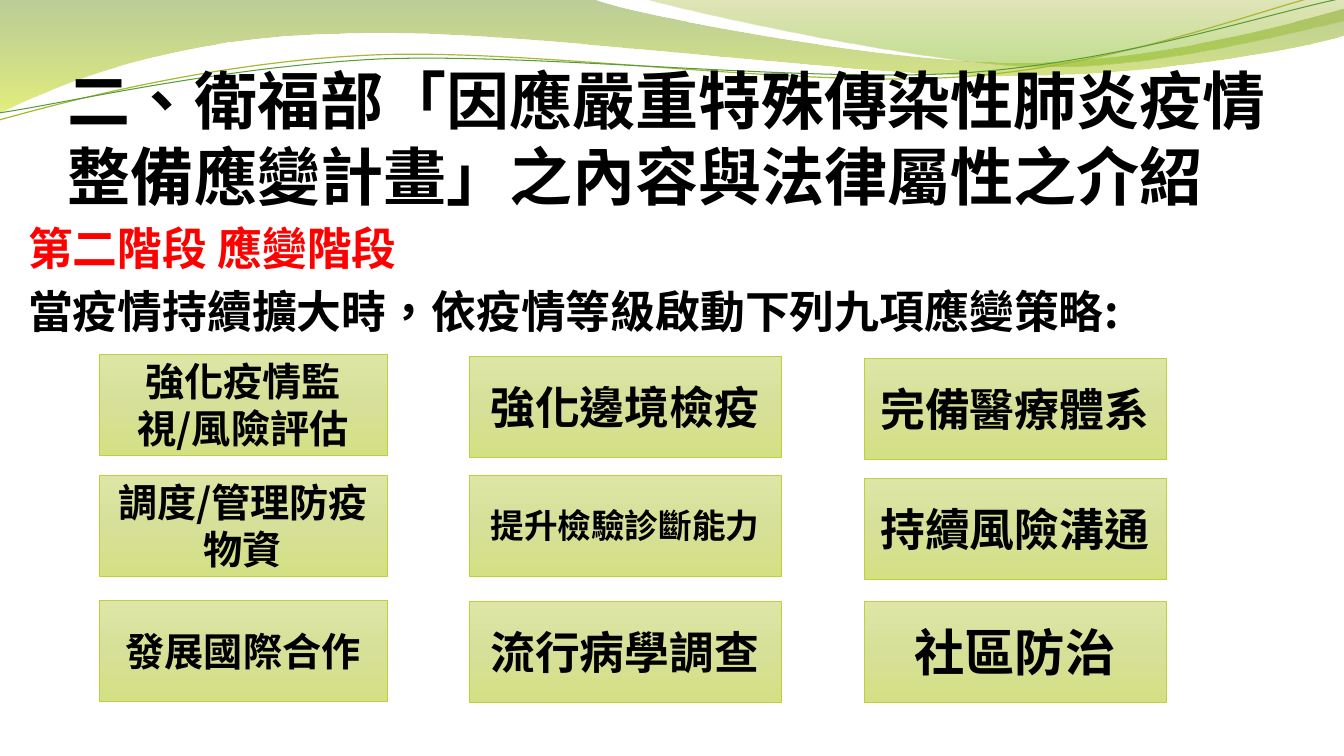
from math import cos, radians, sin

from lxml import etree
from pptx import Presentation
from pptx.dml.color import RGBColor
from pptx.enum.shapes import MSO_SHAPE
from pptx.enum.text import MSO_ANCHOR, MSO_AUTO_SIZE, PP_ALIGN
from pptx.oxml.ns import qn
from pptx.util import Pt

LEFT, CENTER = PP_ALIGN.LEFT, PP_ALIGN.CENTER
BOTTOM, MIDDLE = MSO_ANCHOR.BOTTOM, MSO_ANCHOR.MIDDLE
RECTANGLE = MSO_SHAPE.RECTANGLE
NO_AUTOFIT = MSO_AUTO_SIZE.NONE

EMU_PER_PX = 914400 / 100.8
FONT = "Noto Sans CJK SC"
COLON_FONT = "Noto Sans CJK TC"
COLORS = {
    "text": "000000",
    "stage": "FF0000",
    "box_line": "C0CF3A",
    "olive_line": "A9B733",
    "green_line": "549E39",
}
# Gradient stops: position, colour, opacity (all but the colour in percent)
BOX_STOPS = [(0, "DDE6A6", 100), (50, "D7E098", 100), (100, "D4E084", 100)]
LEFT_WAVE_STOPS = [(0, "69921C", 45), (100, "CCE10F", 55)]
RIGHT_WAVE_STOPS = [(0, "9BAA1A", 30), (80, "81BA16", 45)]

# Outlines in px: one pair is a straight step, three pairs are a cubic curve
LEFT_WAVE = [
    [(0, 0)], [(592, -1)],
    [(639, 17), (891, 63), (1019, 63)], [(1146, 63), (1287, 26), (1344, 9)],
    [(1345, 36)],
    [(1322, 44), (1168, 77), (1002, 76)], [(836, 76), (513, 28), (346, 34)],
    [(173, 36), (61, 84), (-2, 114)],
]
RIGHT_WAVE = [
    [(643, -1)],
    [(684, 11), (916, 62), (1033, 66)], [(1149, 70), (1292, 32), (1344, 21)],
    [(1344, 0)],
]
OLIVE_CURVE = [
    [(-1, 120)],
    [(64, 102), (212, 62), (372, 55)], [(531, 48), (795, 88), (957, 77)],
    [(1119, 67), (1261, 8), (1341, -10)],
]
GREEN_CURVE = [
    [(-1, 113)],
    [(62, 104), (220, 67), (380, 59)], [(541, 53), (802, 83), (963, 73)],
    [(1123, 62), (1265, 14), (1344, -2)],
]
CURVE_TILT = 357.3

TITLE = "二、衛福部「因應嚴重特殊傳染性肺炎疫情整備應變計畫」之內容與法律屬性之介紹"
STAGE = "第二階段 應變階段"
INTRO = "當疫情持續擴大時，依疫情等級啟動下列九項應變策略"
BOX_HEIGHT = 101
# Each column: left, width, then top, text and size of its strategies
STRATEGY_COLUMNS = [
    (99, 288, [(354, "強化疫情監視/風險評估", 28),
               (475, "調度/管理防疫物資", 28),
               (600, "發展國際合作", 28)]),
    (469, 312, [(356, "強化邊境檢疫", 32),
                (475, "提升檢驗診斷能力", 24),
                (601, "流行病學調查", 32)]),
    (864, 302, [(358, "完備醫療體系", 32),
                (478, "持續風險溝通", 32),
                (601, "社區防治", 36)]),
]


def px(length):
    return round(length * EMU_PER_PX)


def place(shape, left, top, width, height):
    shape.left, shape.top = px(left), px(top)
    shape.width, shape.height = px(width), px(height)


def fill_gradient(shape, stops):
    """Fill from top to bottom with any number of stops."""
    shape.fill.gradient()
    shape.fill.gradient_angle = 270
    stop_list = shape.fill._fill._gradFill.find(qn("a:gsLst"))
    for old_stop in list(stop_list):
        stop_list.remove(old_stop)
    for position, color, opacity in stops:
        stop = etree.SubElement(stop_list, qn("a:gs"), pos=str(position * 1000))
        rgb = etree.SubElement(stop, qn("a:srgbClr"), val=color)
        if opacity < 100:
            etree.SubElement(rgb, qn("a:alpha"), val=str(opacity * 1000))


def set_line(shape, color, width):
    shape.line.color.rgb = RGBColor.from_string(COLORS[color])
    shape.line.width = Pt(width)


def format_run(run, size, color="text", font=FONT):
    run.font.size = Pt(size)
    run.font.bold = True
    run.font.name = font
    run.font.color.rgb = RGBColor.from_string(COLORS[color])
    run.font._element.set("lang", "zh-TW")
    east_asian = etree.Element(qn("a:ea"), typeface=font)
    run.font._element.find(qn("a:latin")).addnext(east_asian)


def add_outline(slide, outline, closed):
    """Draw the points as straight steps, then join each triple into a curve."""
    start, *others = [(px(x), px(y)) for piece in outline for x, y in piece]
    builder = slide.shapes.build_freeform(*start, scale=1.0)
    builder.add_line_segments(others, close=closed)
    shape = builder.convert_to_shape()
    shape.shadow.inherit = False
    steps = iter(list(shape._element.iter(qn("a:lnTo"))))
    for piece in outline[1:]:
        first, *rest = [next(steps) for _ in piece]
        if rest:
            curve = etree.Element(qn("a:cubicBezTo"))
            first.addprevious(curve)
            for step in (first, *rest):
                curve.append(step[0])
                step.getparent().remove(step)
    return shape


def add_wave(slide, outline, stops):
    wave = add_outline(slide, outline, True)
    fill_gradient(wave, stops)
    wave.line.fill.background()


def level(outline, center):
    """Turn an outline back by the tilt that its shape is given."""
    center_x, center_y = center
    angle = radians(-CURVE_TILT)
    return [[(center_x + (x - center_x) * cos(angle) - (y - center_y) * sin(angle),
              center_y + (x - center_x) * sin(angle) + (y - center_y) * cos(angle))
             for x, y in piece] for piece in outline]


def add_curve(slide, outline, center, color, width):
    curve = add_outline(slide, level(outline, center), False)
    curve.rotation = CURVE_TILT
    curve.fill.background()
    set_line(curve, color, width)


def fill_title(title):
    place(title, 68, 70, 1210, 143)
    frame = title.text_frame
    frame.text = TITLE
    frame.auto_size = NO_AUTOFIT
    frame.vertical_anchor = BOTTOM
    frame.margin_left = frame.margin_right = frame.margin_bottom = 0
    paragraph = frame.paragraphs[0]
    paragraph.alignment = LEFT
    format_run(paragraph.runs[0], 45)


def fill_body(body):
    place(body, 18, 216, 1300, 484)
    frame = body.text_frame
    frame.text = f"{STAGE}\n{INTRO}"
    frame.auto_size = NO_AUTOFIT
    stage, intro = frame.paragraphs
    for paragraph, space in ((stage, 0), (intro, 6)):
        properties = paragraph._p.get_or_add_pPr()
        properties.set("marL", "0")
        properties.set("indent", "0")
        etree.SubElement(properties, qn("a:buNone"))
        paragraph.space_before = Pt(space)
    format_run(stage.runs[0], 32, "stage")
    format_run(intro.runs[0], 32)
    colon = intro.add_run()
    colon.text = ":"
    format_run(colon, 32, font=COLON_FONT)


def add_strategy(slide, left, top, width, text, size):
    box = slide.shapes.add_shape(RECTANGLE, px(left), px(top), px(width), px(BOX_HEIGHT))
    box.shadow.inherit = False
    fill_gradient(box, BOX_STOPS)
    set_line(box, "box_line", 0.5)
    box.text_frame.text = text
    box.text_frame.word_wrap = True
    box.text_frame.vertical_anchor = MIDDLE
    paragraph = box.text_frame.paragraphs[0]
    paragraph.alignment = CENTER
    format_run(paragraph.runs[0], size)


def main():
    presentation = Presentation()
    presentation.slide_width, presentation.slide_height = px(1344), px(756)
    slide = presentation.slides.add_slide(presentation.slide_layouts[1])
    title, body = slide.placeholders
    add_wave(slide, LEFT_WAVE, LEFT_WAVE_STOPS)
    add_wave(slide, RIGHT_WAVE, RIGHT_WAVE_STOPS)
    add_curve(slide, OLIVE_CURVE, (670, 58), "olive_line", 0.85)
    add_curve(slide, GREEN_CURVE, (672, 59), "green_line", 0.75)
    for placeholder in (title, body):
        slide.shapes._spTree.append(placeholder._element)
    fill_title(title)
    fill_body(body)
    for left, width, strategies in STRATEGY_COLUMNS:
        for top, text, size in strategies:
            add_strategy(slide, left, top, width, text, size)
    presentation.save("out.pptx")


if __name__ == "__main__":
    main()
